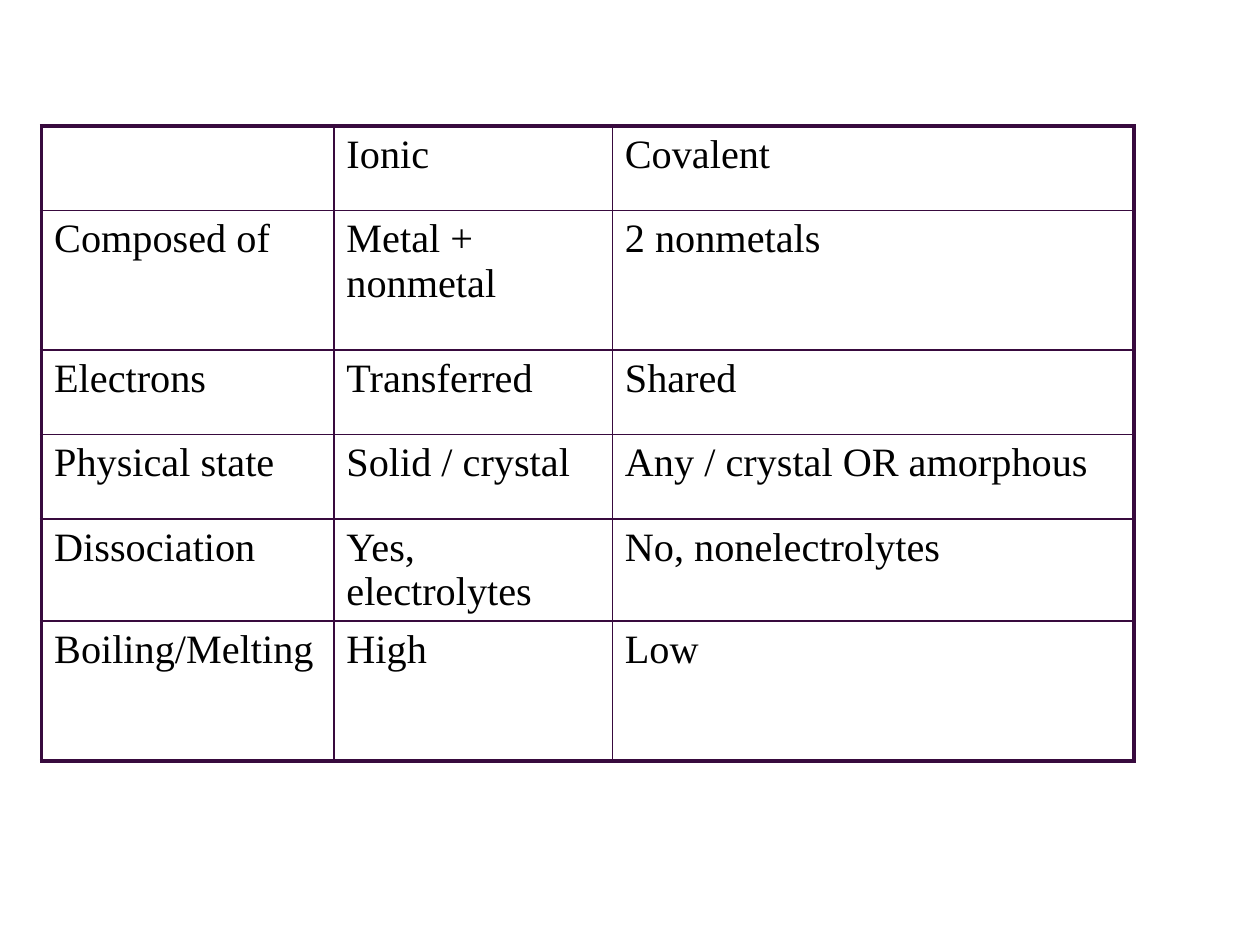
from lxml import etree
from pptx import Presentation
from pptx.dml.color import RGBColor
from pptx.oxml import ns
from pptx.util import Inches, Pt

COLORS = {"text": "000000", "border": "380A3E"}
OUTER, INNER = 2.25, 1
COLUMN_WIDTHS = [2.32, 2.21, 4.14]
ROW_HEIGHTS = [0.67, 1.11, 0.67, 0.67, 0.81, 1.11]
COMPARISON = [
    ["", "Ionic", "Covalent"],
    ["Composed of", "Metal + nonmetal", "2 nonmetals"],
    ["Electrons", "Transferred", "Shared"],
    ["Physical state", "Solid / crystal", "Any / crystal OR amorphous"],
    ["Dissociation", "Yes, electrolytes", "No, nonelectrolytes"],
    ["Boiling/Melting", "High", "Low"],
]


def write(frame, words, size=23, font="Times New Roman", color="text"):
    paragraph = frame.paragraphs[0]
    paragraph.font.size = Pt(size)
    if words:
        run = paragraph.add_run()
        run.text = words
        run.font.size = Pt(size)
        run.font.name = font
        run.font.color.rgb = RGBColor.from_string(COLORS[color])


def set_borders(cell, widths):
    """Draw the cell's borders; widths maps L, R, T, B, in that order, to points."""
    properties = cell._tc.get_or_add_tcPr()
    for side, width in widths.items():
        line = etree.SubElement(properties, ns.qn(f"a:ln{side}"), w=str(Pt(width)))
        fill = etree.SubElement(line, ns.qn("a:solidFill"))
        etree.SubElement(fill, ns.qn("a:srgbClr"), val=COLORS["border"])


def add_comparison_table(slide, left, top):
    last_row, last_column = len(ROW_HEIGHTS) - 1, len(COLUMN_WIDTHS) - 1
    table = slide.shapes.add_table(
        len(ROW_HEIGHTS), len(COLUMN_WIDTHS), Inches(left), Inches(top),
        Inches(sum(COLUMN_WIDTHS)), Inches(sum(ROW_HEIGHTS))).table
    table.first_row = table.horz_banding = False
    for column, width in zip(table.columns, COLUMN_WIDTHS):
        column.width = Inches(width)
    for row, height in zip(table.rows, ROW_HEIGHTS):
        row.height = Inches(height)
    for r, entries in enumerate(COMPARISON):
        for c, words in enumerate(entries):
            cell = table.cell(r, c)
            write(cell.text_frame, words)
            set_borders(cell, {
                "L": OUTER if c == 0 else INNER,
                "R": OUTER if c == last_column else INNER,
                "T": OUTER if r == 0 else INNER,
                "B": OUTER if r == last_row else INNER,
            })
            cell.fill.background()


def main():
    deck = Presentation()
    deck.slide_width, deck.slide_height = Inches(10), Inches(7.5)
    slide = deck.slides.add_slide(deck.slide_layouts[6])
    add_comparison_table(slide, left=0.33, top=1)
    deck.save("out.pptx")


if __name__ == "__main__":
    main()
